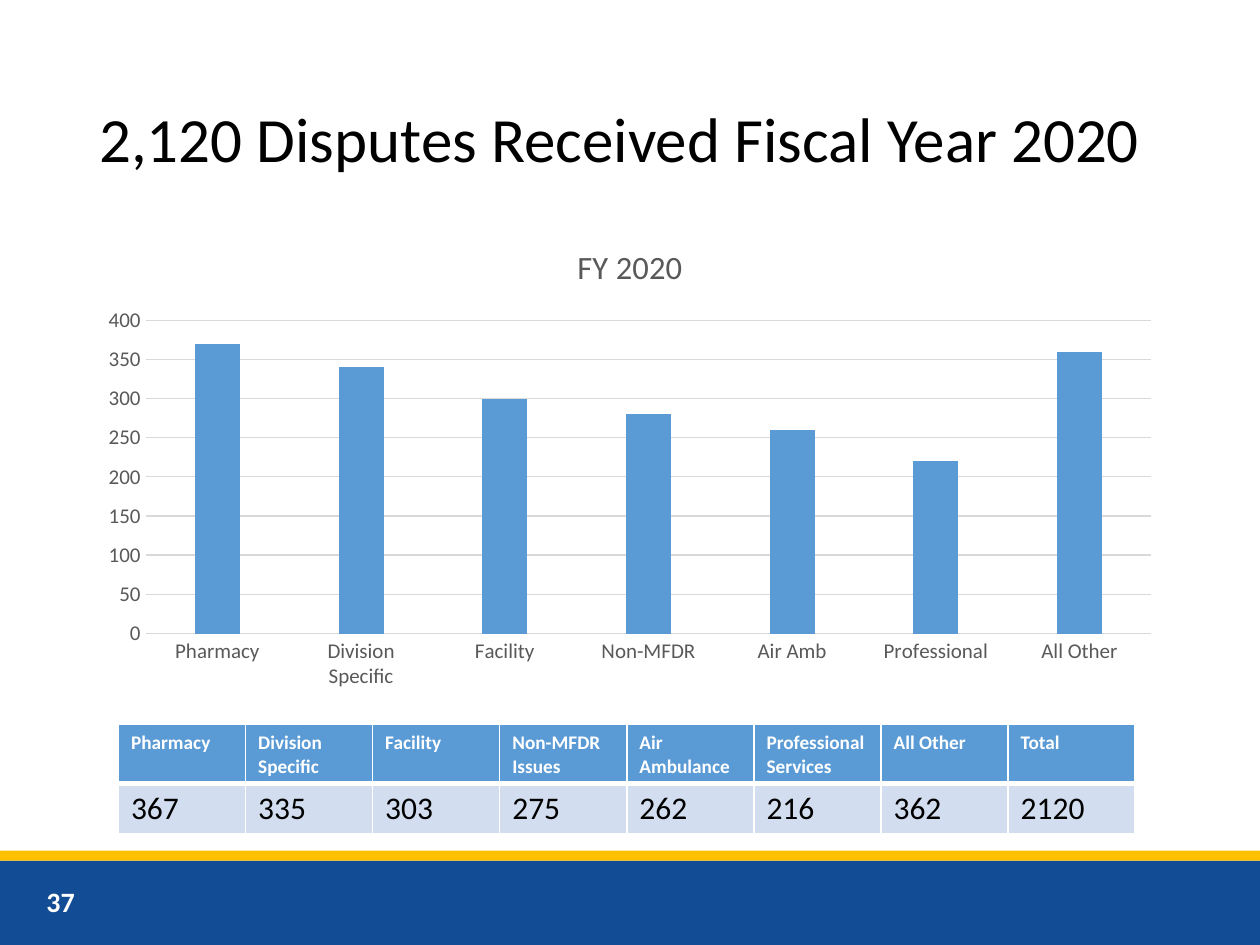
from pptx import Presentation
from pptx.chart.data import CategoryChartData
from pptx.dml.color import RGBColor
from pptx.enum.chart import XL_CHART_TYPE as ChartType, XL_TICK_MARK as TickMark
from pptx.enum.shapes import MSO_SHAPE as Shape
from pptx.enum.text import MSO_ANCHOR as Anchor
from pptx.oxml import parse_xml
from pptx.oxml.ns import nsdecls
from pptx.util import Inches, Pt

FONT = "Calibri"
COLORS = {
    "navy": "124C95", "gold": "FFC000", "white": "FFFFFF", "black": "000000",
    "blue": "5B9BD5", "pale": "D2DEEF", "gray": "595959", "grid": "D9D9D9",
}
DISPUTES = [
    # chart label, table heading, count
    ("Pharmacy", "Pharmacy", 367),
    ("Division Specific", "Division Specific", 335),
    ("Facility", "Facility", 303),
    ("Non-MFDR", "Non-MFDR Issues", 275),
    ("Air Amb", "Air Ambulance", 262),
    ("Professional", "Professional Services", 216),
    ("All Other", "All Other", 362),
]


def color(name):
    return RGBColor.from_string(COLORS[name])


def style_font(font, size, color_name, bold=False):
    font.name = FONT
    font.size = Pt(size)
    font.bold = bold
    font.color.rgb = color(color_name)


presentation = Presentation()
presentation.slide_width = Inches(10)
presentation.slide_height = Inches(7.5)
slide = presentation.slides.add_slide(presentation.slide_layouts[6])

# Footer bands
for top, height, fill in [(6.83, 0.67, "navy"), (6.75, 0.08, "gold")]:
    band = slide.shapes.add_shape(
        Shape.RECTANGLE, 0, Inches(top), Inches(10), Inches(height))
    band.shadow.inherit = False
    band.fill.solid()
    band.fill.fore_color.rgb = color(fill)
    band.line.fill.background()

# Page number and title
texts = [
    ("37", (0.27, 6.95, 2.25, 0.4), 16, "white", True, 1),
    ("2,120 Disputes Received Fiscal Year 2020",
     (0.69, 0.4, 8.62, 1.45), 36, "black", False, 0.9),
]
for text, box, size, color_name, bold, spacing in texts:
    text_frame = slide.shapes.add_textbox(*map(Inches, box)).text_frame
    text_frame.word_wrap = True
    text_frame.vertical_anchor = Anchor.MIDDLE
    text_frame.text = text
    paragraph = text_frame.paragraphs[0]
    paragraph.line_spacing = spacing
    style_font(paragraph.runs[0].font, size, color_name, bold)

# Column chart, with counts rounded to tens
chart_data = CategoryChartData()
chart_data.categories = [label for label, _, _ in DISPUTES]
chart_data.add_series("FY 2020", [round(count, -1) for _, _, count in DISPUTES])
chart = slide.shapes.add_chart(
    ChartType.COLUMN_CLUSTERED, Inches(0.69), Inches(1.76),
    Inches(8.62), Inches(3.78), chart_data).chart
style_font(chart.font, 10, "black")
chart.has_legend = False
chart.has_title = True
chart.chart_title.text_frame.text = "FY 2020"
chart.chart_title.include_in_layout = False
style_font(chart.chart_title.text_frame.paragraphs[0].runs[0].font, 18.6, "gray")

plot = chart.plots[0]
plot.gap_width = 219
plot.overlap = -27
plot.vary_by_categories = False
plot.series[0].format.fill.solid()
plot.series[0].format.fill.fore_color.rgb = color("blue")

category_axis, value_axis = chart.category_axis, chart.value_axis
for axis in (category_axis, value_axis):
    axis.major_tick_mark = TickMark.NONE
    axis.minor_tick_mark = TickMark.NONE
    style_font(axis.tick_labels.font, 12, "gray")
value_axis.minimum_scale = 0
value_axis.maximum_scale = 400
value_axis.major_unit = 50
value_axis.format.line.fill.background()
for line in (category_axis.format.line, value_axis.major_gridlines.format.line):
    line.color.rgb = color("grid")
    line.width = Pt(0.75)

# Table of counts with a total
headings = [heading for _, heading, _ in DISPUTES] + ["Total"]
counts = [count for _, _, count in DISPUTES]
counts.append(sum(counts))
table = slide.shapes.add_table(
    2, len(headings), Inches(0.94), Inches(5.75), Inches(8.07), Inches(0.87)).table
rows = [
    # texts, row height, size, font colour, bold, fill, top and bottom border widths
    (headings, 0.47, 11, "white", True, "blue", 1, 3),
    (counts, 0.4, 18, "black", False, "pale", 3, 1),
]
for row, (values, height, size, font_color, bold, fill, top, bottom) in enumerate(rows):
    table.rows[row].height = Inches(height)
    for column, value in enumerate(values):
        cell = table.cell(row, column)
        cell.text = str(value)
        style_font(cell.text_frame.paragraphs[0].runs[0].font, size, font_color, bold)
        properties = cell._tc.get_or_add_tcPr()
        for side, width in zip("LRTB", (1, 1, top, bottom)):
            properties.append(parse_xml(
                f'<a:ln{side} {nsdecls("a")} w="{Pt(width)}"><a:solidFill>'
                f'<a:srgbClr val="{COLORS["white"]}"/></a:solidFill></a:ln{side}>'))
        cell.fill.solid()
        cell.fill.fore_color.rgb = color(fill)

presentation.save("out.pptx")
